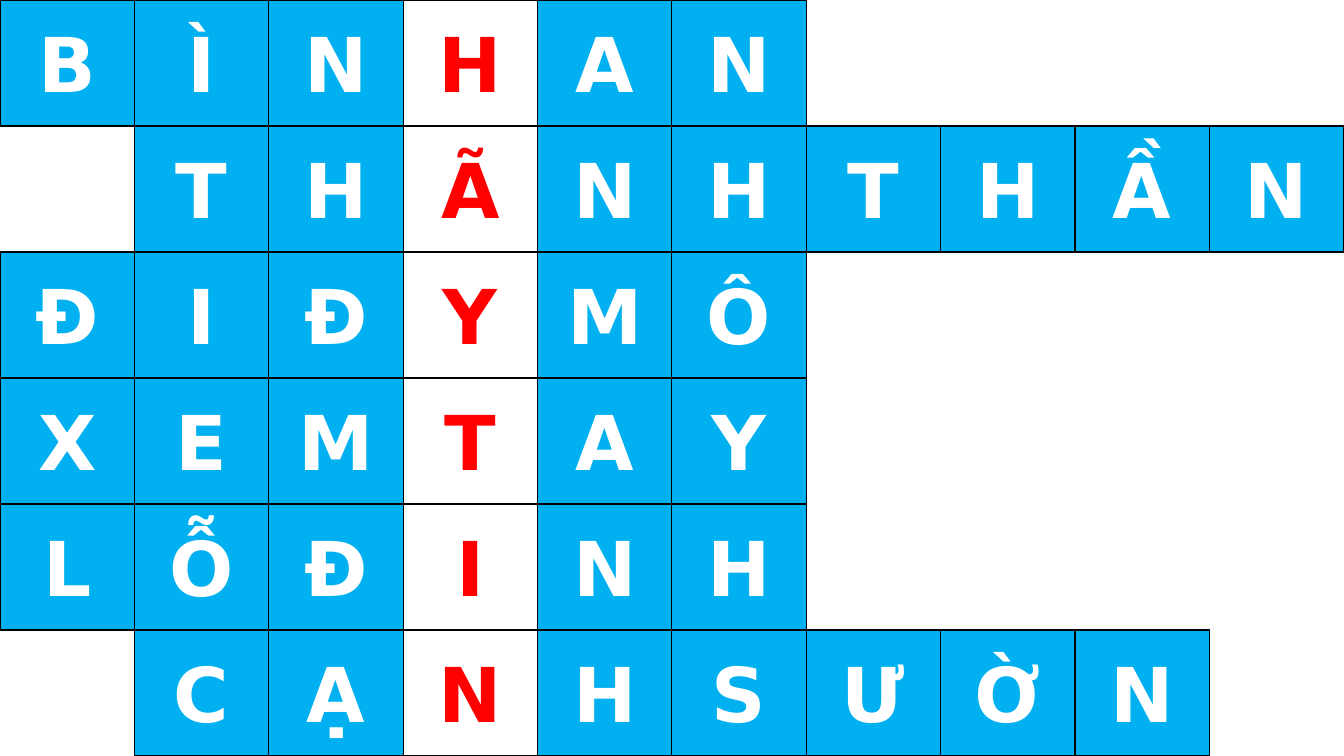
"""Build a crossword slide whose red column spells the key phrase."""
from lxml.etree import SubElement
from pptx import Presentation
from pptx.dml.color import RGBColor
from pptx.enum.text import MSO_ANCHOR as Anchor, PP_ALIGN as Align
from pptx.oxml.ns import qn
from pptx.util import Inches, Pt

ANSWERS = [
    (0, "BÌNHAN"),
    (1, "THÃNHTHẦN"),
    (0, "ĐIĐYMÔ"),
    (0, "XEMTAY"),
    (0, "LỖĐINH"),
    (1, "CẠNHSƯỜN"),
]
COLUMNS = 10
KEY_COLUMN = 3
SLIDE_WIDTH, SLIDE_HEIGHT = Inches(13.33), Inches(7.5)

BLUE = RGBColor(0x00, 0xB0, 0xF0)
WHITE = RGBColor(0xFF, 0xFF, 0xFF)
RED = RGBColor(0xFF, 0x00, 0x00)
BLACK = RGBColor(0x00, 0x00, 0x00)

SIDES = {"a:lnL": (0, -1), "a:lnR": (0, 1), "a:lnT": (-1, 0), "a:lnB": (1, 0)}
CELL_FORMAT = {
    "vertical_anchor": Anchor.MIDDLE,
    "margin_left": Inches(0.07),
    "margin_right": Inches(0.07),
    "margin_top": 0,
    "margin_bottom": 0,
}
PARA_FORMAT = {"alignment": Align.CENTER, "line_spacing": 1.07, "space_after": Pt(8)}
FONT_FORMAT = {"name": "DejaVu Sans", "size": Pt(54), "bold": True}


def apply_format(target, values):
    """Set each named attribute of the target."""
    for name, value in values.items():
        setattr(target, name, value)


def draw_border(cell, side, visible):
    """Add one cell edge, black or empty."""
    line = SubElement(cell._tc.get_or_add_tcPr(), qn(side), w=str(Pt(1)))
    if visible:
        fill = SubElement(line, qn("a:solidFill"))
        SubElement(fill, qn("a:srgbClr"), val=str(BLACK))
    else:
        SubElement(line, qn("a:noFill"))


def write_letter(cell, letter, is_key):
    """Fill a cell and write its letter."""
    cell.fill.solid()
    cell.fill.fore_color.rgb = WHITE if is_key else BLUE
    apply_format(cell, CELL_FORMAT)
    para = cell.text_frame.paragraphs[0]
    apply_format(para, PARA_FORMAT)
    span = para.add_run()
    span.text = letter
    apply_format(span.font, FONT_FORMAT)
    span.font.color.rgb = RED if is_key else WHITE


def main():
    """Lay out the crossword and save the deck."""
    deck = Presentation()
    deck.slide_width, deck.slide_height = SLIDE_WIDTH, SLIDE_HEIGHT
    page = deck.slides.add_slide(deck.slide_layouts[6])
    grid = page.shapes.add_table(
        len(ANSWERS), COLUMNS, 0, 0, SLIDE_WIDTH, SLIDE_HEIGHT
    ).table
    apply_format(grid, {"first_row": False, "horz_banding": False})

    letters = {
        (row, start + offset): letter
        for row, (start, word) in enumerate(ANSWERS)
        for offset, letter in enumerate(word)
    }
    for row in range(len(ANSWERS)):
        for column in range(COLUMNS):
            cell = grid.cell(row, column)
            place = (row, column)
            for side, (down, across) in SIDES.items():
                neighbour = (row + down, column + across)
                draw_border(cell, side, place in letters or neighbour in letters)
            if place in letters:
                write_letter(cell, letters[place], column == KEY_COLUMN)
            else:
                cell.fill.background()

    deck.save("out.pptx")


if __name__ == "__main__":
    main()
